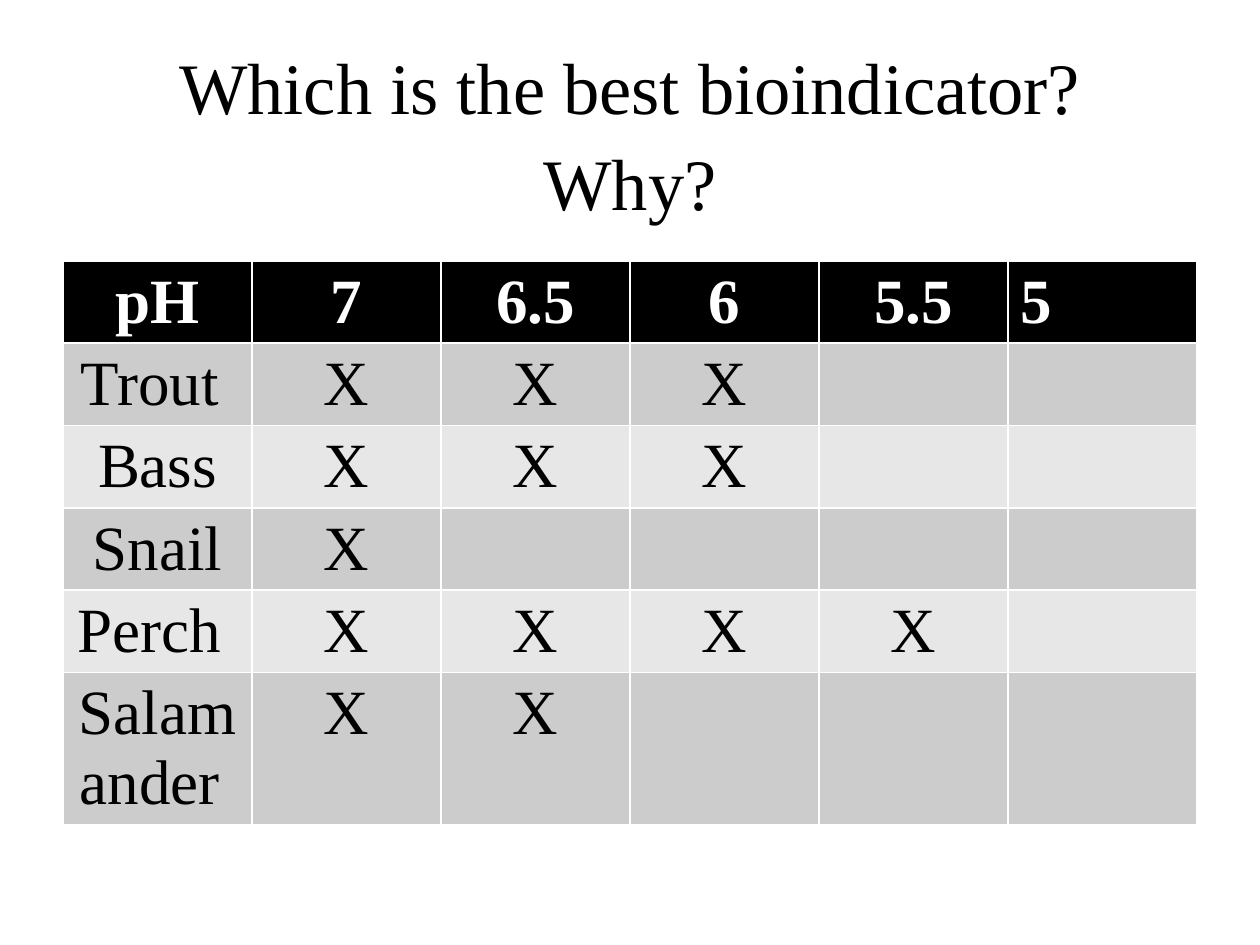
from pptx import Presentation
from pptx.dml.color import RGBColor
from pptx.enum.text import MSO_ANCHOR, MSO_AUTO_SIZE, PP_ALIGN
from pptx.util import Inches, Pt

CENTER, LEFT = PP_ALIGN.CENTER, PP_ALIGN.LEFT
MIDDLE = MSO_ANCHOR.MIDDLE
NO_AUTOFIT = MSO_AUTO_SIZE.NONE

BLACK = RGBColor(0x00, 0x00, 0x00)
WHITE = RGBColor(0xFF, 0xFF, 0xFF)
DARK_BAND = RGBColor(0xCC, 0xCC, 0xCC)
LIGHT_BAND = RGBColor(0xE7, 0xE7, 0xE7)
FONT = "Times New Roman"

PH_LEVELS = ["7", "6.5", "6", "5.5", "5"]
SURVIVED_LEVELS = {"Trout ": 3, "Bass": 3, "Snail": 1, "Perch ": 4, "Salamander ": 2}


def write_text(frame, text, size, color=BLACK, bold=False, align=CENTER, spacing=None):
    paragraph = frame.paragraphs[0]
    paragraph.alignment = align
    paragraph.line_spacing = spacing
    run = paragraph.add_run()
    run.text = text
    run.font.name = FONT
    run.font.size = Pt(size)
    run.font.bold = bold
    run.font.color.rgb = color


def place_title(slide, left, top, width, height):
    title = slide.shapes.title
    title.left, title.top, title.width, title.height = left, top, width, height
    frame = title.text_frame
    frame.word_wrap = True
    frame.auto_size = NO_AUTOFIT
    frame.vertical_anchor = MIDDLE
    write_text(frame, "Which is the best bioindicator? Why?", 41.4, spacing=1.1)


def place_tolerance_table(slide, left, top, width, height):
    row_count, column_count = len(SURVIVED_LEVELS) + 1, len(PH_LEVELS) + 1
    table = slide.shapes.add_table(
        row_count, column_count, left, top, width, height).table
    row_height = Inches(0.65)
    for row in table.rows:
        row.height = row_height
    table.rows[row_count - 1].height = height - row_height * (row_count - 1)

    for column, label in enumerate(["pH"] + PH_LEVELS):
        cell = table.cell(0, column)
        cell.fill.solid()
        cell.fill.fore_color.rgb = BLACK
        align = LEFT if column == column_count - 1 else CENTER
        write_text(cell.text_frame, label, 36, color=WHITE, bold=True, align=align)

    for row, (animal, survived) in enumerate(SURVIVED_LEVELS.items(), start=1):
        labels = [animal] + ["X"] * survived
        for column in range(column_count):
            cell = table.cell(row, column)
            cell.fill.solid()
            cell.fill.fore_color.rgb = DARK_BAND if row % 2 else LIGHT_BAND
            if column < len(labels):
                write_text(cell.text_frame, labels[column], 36)


def main():
    presentation = Presentation()
    presentation.slide_width = Inches(10)
    presentation.slide_height = Inches(7.5)
    slide = presentation.slides.add_slide(presentation.slide_layouts[5])
    place_title(slide, Inches(1), Inches(0.55), Inches(8), Inches(0.95))
    place_tolerance_table(slide, Inches(0.5), Inches(2.07), Inches(9), Inches(4.46))
    presentation.save("out.pptx")


if __name__ == "__main__":
    main()
